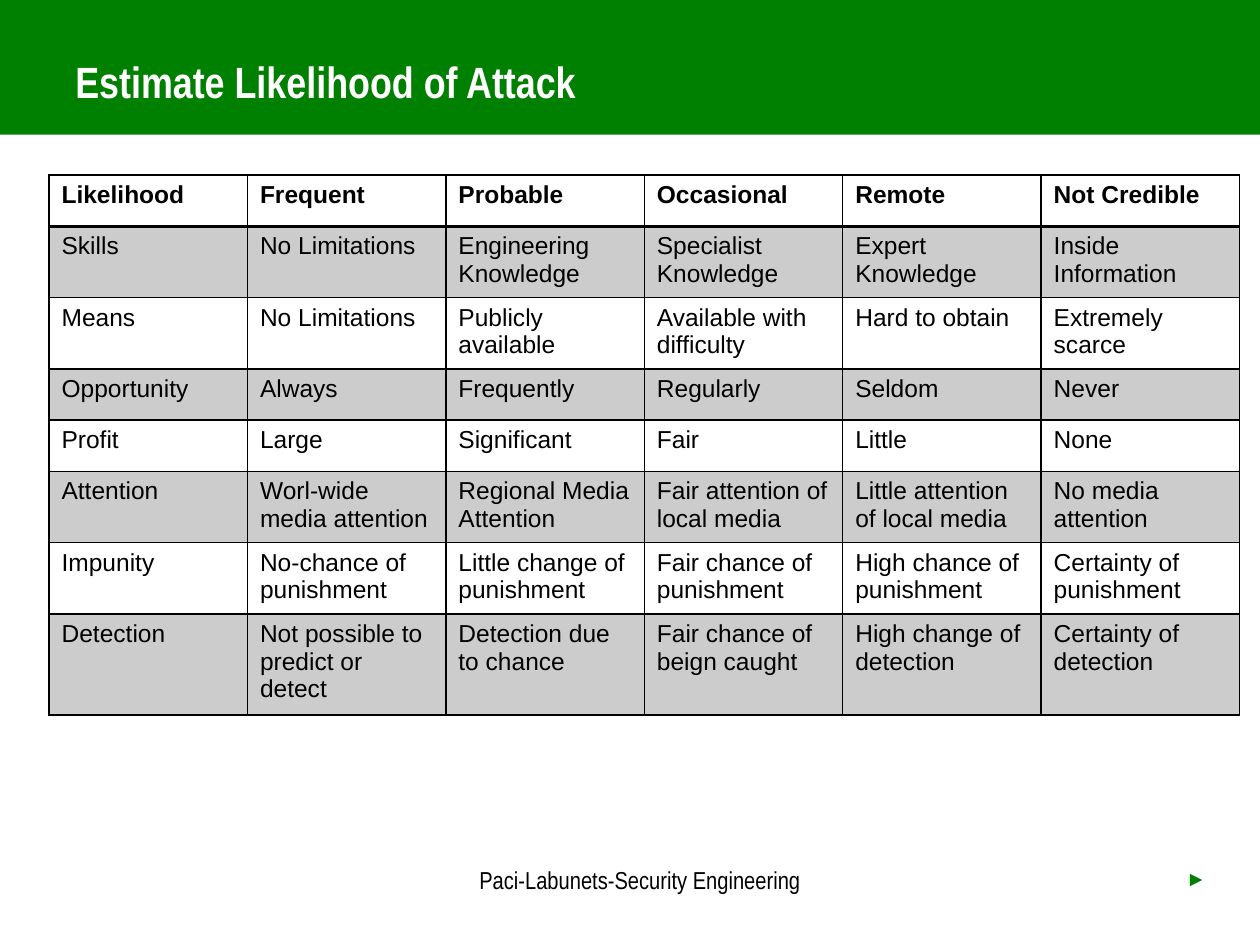
from lxml.etree import SubElement
from pptx import Presentation
from pptx.dml.color import RGBColor
from pptx.enum.shapes import MSO_SHAPE as SHAPE
from pptx.enum.text import MSO_ANCHOR as ANCHOR, PP_ALIGN as ALIGN
from pptx.oxml.ns import qn
from pptx.util import Pt

COLORS = {"green": "008000", "white": "FFFFFF", "black": "000000"}
NARROW = "Arial Narrow"
BAND_OPACITY = 20

LIKELIHOOD = [
    ["Likelihood", "Frequent", "Probable", "Occasional", "Remote", "Not Credible"],
    ["Skills", "No Limitations", "Engineering Knowledge", "Specialist Knowledge",
     "Expert Knowledge", "Inside Information"],
    ["Means", "No Limitations", "Publicly available", "Available with difficulty",
     "Hard to obtain", "Extremely scarce"],
    ["Opportunity", "Always", "Frequently", "Regularly", "Seldom", "Never"],
    ["Profit", "Large", "Significant", "Fair", "Little", "None"],
    ["Attention", "Worl-wide media attention", "Regional Media Attention",
     "Fair attention of local media", "Little attention of local media",
     "No media attention"],
    ["Impunity", "No-chance of punishment", "Little change of punishment",
     "Fair chance of punishment", "High chance of punishment",
     "Certainty of punishment"],
    ["Detection", "Not possible to predict or detect", "Detection due to chance",
     "Fair chance of beign caught", "High change of detection",
     "Certainty of detection"],
]


def rgb(name):
    return RGBColor.from_string(COLORS[name])


def write(tf, text, size=14, font="Arial", color="black", bold=False,
          align=ALIGN.LEFT, anchor=None):
    tf.word_wrap = True
    if anchor is not None:
        tf.vertical_anchor = anchor
    p = tf.paragraphs[0]
    p.alignment = align
    r = p.add_run()
    r.text = text
    r.font.size = Pt(size)
    r.font.name = font
    r.font.bold = bold
    r.font.color.rgb = rgb(color)


def add_text(slide, box, text, **fmt):
    tf = slide.shapes.add_textbox(*map(Pt, box)).text_frame
    write(tf, text, **fmt)
    return tf


def add_header(slide, x, y, w, h):
    band = slide.shapes.add_shape(SHAPE.RECTANGLE, Pt(x), Pt(y), Pt(w), Pt(h))
    band.shadow.inherit = False
    band.fill.solid()
    band.fill.fore_color.rgb = rgb("green")
    band.line.fill.background()
    add_text(slide, (x + 36, y + 23.5, 477.5, 49.5), "Estimate Likelihood of Attack",
             size=25, font=NARROW, color="white", bold=True, anchor=ANCHOR.MIDDLE)


def set_borders(cell, bottom):
    tc_pr = cell._tc.get_or_add_tcPr()
    for side, width in (("L", 1), ("R", 1), ("T", 1), ("B", bottom)):
        ln = SubElement(tc_pr, qn(f"a:ln{side}"), w=str(Pt(width)))
        fill = SubElement(ln, qn("a:solidFill"))
        SubElement(fill, qn("a:srgbClr"), val=COLORS["black"])


def fill_band(cell):
    """Fill the cell with see-through black, which shows as grey."""
    cell.fill.solid()
    cell.fill.fore_color.rgb = rgb("black")
    color = cell._tc.tcPr.find(qn("a:solidFill")).find(qn("a:srgbClr"))
    SubElement(color, qn("a:alpha"), val=str(BAND_OPACITY * 1000))


def add_likelihood_table(slide, x, y, w, row_h):
    n_rows, n_cols = len(LIKELIHOOD), len(LIKELIHOOD[0])
    table = slide.shapes.add_table(n_rows, n_cols, Pt(x), Pt(y), Pt(w),
                                   Pt(row_h * n_rows)).table
    for col in table.columns:
        col.width = Pt(w / n_cols)
    for i, labels in enumerate(LIKELIHOOD):
        table.rows[i].height = Pt(row_h)
        for j, label in enumerate(labels):
            cell = table.cell(i, j)
            write(cell.text_frame, label, bold=i == 0)
            set_borders(cell, bottom=2 if i == 0 else 1)
            if i % 2:
                fill_band(cell)
            else:
                cell.fill.background()


def add_footer(slide, x, y, w, h):
    add_text(slide, (x, y, 351.5, h), "Paci-Labunets-Security Engineering",
             font=NARROW, align=ALIGN.CENTER)
    marker_w = 76.5
    tf = add_text(slide, (x + w - marker_w, y, marker_w, h), "►",
                  size=12, font=NARROW, color="green", align=ALIGN.RIGHT)
    tf.margin_right = Pt(13)


def main():
    prs = Presentation()
    prs.slide_width, prs.slide_height = Pt(720), Pt(540)
    slide = prs.slides.add_slide(prs.slide_layouts[6])
    add_header(slide, 0, -2, 720, 79)
    add_likelihood_table(slide, 28, 100, 680.4, 29.2)
    add_footer(slide, 190, 491, 512.5, 36)
    prs.save("out.pptx")


if __name__ == "__main__":
    main()
